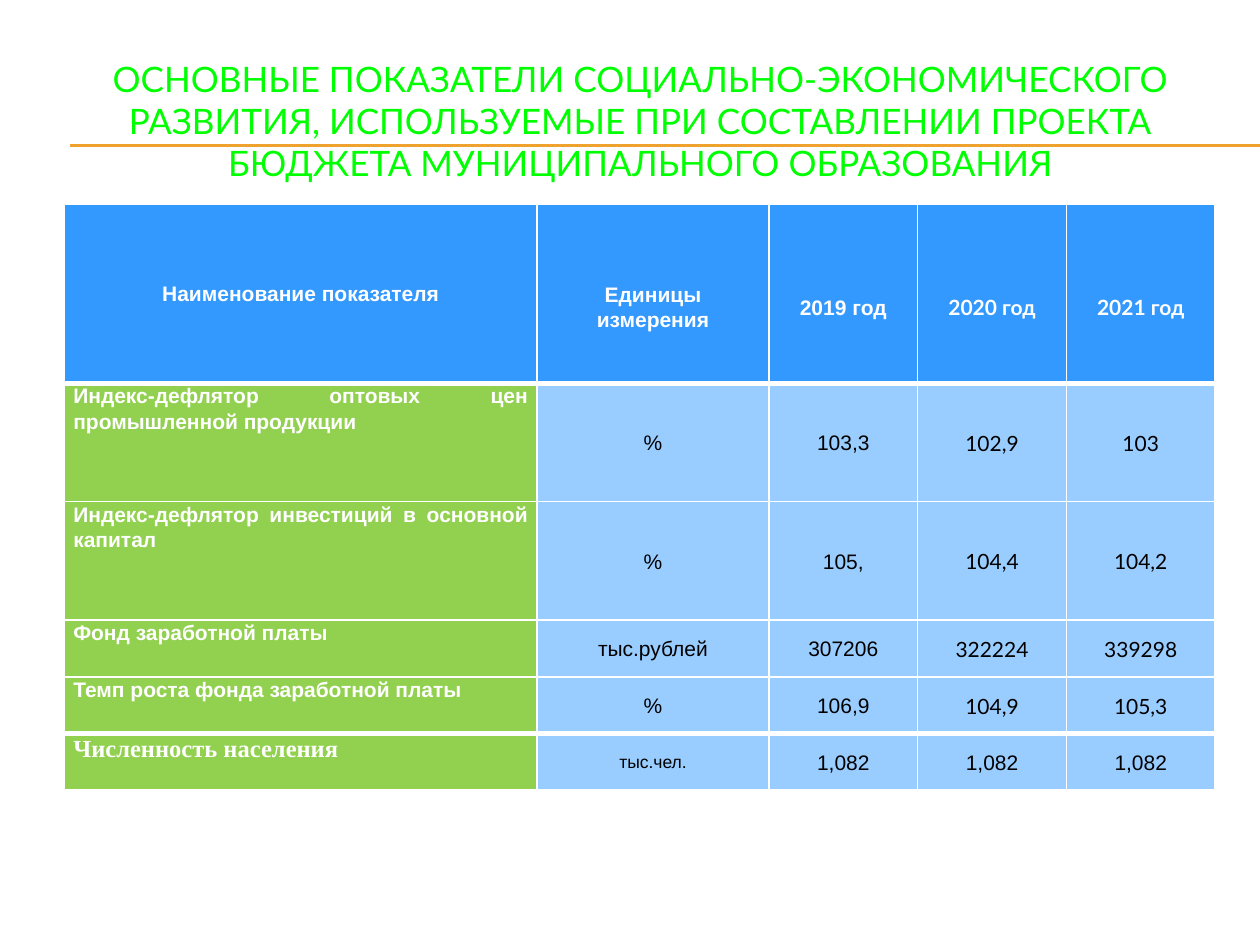
from dataclasses import dataclass

import pptx
import pptx.dml.color
import pptx.enum.shapes
import pptx.enum.text
import pptx.oxml.ns
import pptx.util
from lxml import etree

Pt = pptx.util.Pt
ALIGN = pptx.enum.text.PP_ALIGN
ANCHOR = pptx.enum.text.MSO_ANCHOR


@dataclass(frozen=True)
class Theme:
    title: str = "00FF00"
    rule: str = "F0A22E"
    header: str = "3399FF"
    indicator: str = "92D050"
    value: str = "99CCFF"
    light: str = "FFFFFF"
    dark: str = "000000"
    title_size: float = 20
    text_size: float = 12
    population_size: float = 14
    unit_size: float = 10
    sans: str = "Arial"
    display: str = "Lato"
    serif: str = "Times New Roman"


THEME = Theme()
TITLE = ("ОСНОВНЫЕ ПОКАЗАТЕЛИ СОЦИАЛЬНО-ЭКОНОМИЧЕСКОГО РАЗВИТИЯ, ИСПОЛЬЗУЕМЫЕ "
         "ПРИ СОСТАВЛЕНИИ ПРОЕКТА БЮДЖЕТА МУНИЦИПАЛЬНОГО ОБРАЗОВАНИЯ")
INDICATORS = [
    ("Наименование показателя", "Единицы измерения", "2019 год", "2020 год", "2021 год"),
    ("Индекс-дефлятор оптовых цен промышленной продукции", "%", "103,3", "102,9", "103"),
    ("Индекс-дефлятор инвестиций в основной капитал", "%", "105,", "104,4", "104,2"),
    ("Фонд заработной платы", "тыс.рублей", "307206", "322224", "339298"),
    ("Темп роста фонда заработной платы", "%", "106,9", "104,9", "105,3"),
    ("Численность населения", "тыс.чел.", "1,082", "1,082", "1,082"),
]
COLUMN_WIDTHS = [270, 132.5, 85, 85, 85]
ROW_HEIGHTS = [102.2, 67.7, 67.7, 32.4, 32.4, 32.4]
LAST_ROW = len(INDICATORS) - 1
HEAVY_EDGES = {1, LAST_ROW}  # row boundaries, counted from the table top


def rgb(value):
    return pptx.dml.color.RGBColor.from_string(value)


def add_run(paragraph, text, font, size, color, bold=False):
    run = paragraph.add_run()
    run.text = text
    run.font.name = font
    run.font.size = Pt(size)
    run.font.bold = bold
    run.font.color.rgb = rgb(color)


def add_double_rule(slide, left, top, width):
    for offset in (0, 0.6):
        rule = slide.shapes.add_connector(
            pptx.enum.shapes.MSO_CONNECTOR.STRAIGHT,
            Pt(left), Pt(top + offset), Pt(left + width), Pt(top + offset))
        rule.line.color.rgb = rgb(THEME.rule)
        rule.line.width = Pt(0.75)
        etree.SubElement(rule._element.spPr, pptx.oxml.ns.qn("a:effectLst"))


def add_title(slide, left, top, width, height):
    title = slide.shapes.add_textbox(Pt(left), Pt(top), Pt(width), Pt(height)).text_frame
    title.word_wrap = True
    title.vertical_anchor = ANCHOR.MIDDLE
    title.paragraphs[0].alignment = ALIGN.CENTER
    add_run(title.paragraphs[0], TITLE, THEME.display, THEME.title_size, THEME.title)


def set_borders(cell, row):
    qn = pptx.oxml.ns.qn
    widths = {"L": 1, "R": 1,
              "T": 3 if row in HEAVY_EDGES else 1,
              "B": 3 if row + 1 in HEAVY_EDGES else 1}
    properties = cell._tc.get_or_add_tcPr()
    for side, width in widths.items():
        edge = etree.SubElement(properties, qn(f"a:ln{side}"), w=str(int(Pt(width))))
        fill = etree.SubElement(edge, qn("a:solidFill"))
        etree.SubElement(fill, qn("a:srgbClr"), val=THEME.light)


def cell_font(row, column):
    """Return the typeface and size used at a table position."""
    if row == LAST_ROW:
        if column == 0:
            return THEME.serif, THEME.population_size
        return THEME.sans, THEME.unit_size if column == 1 else THEME.text_size
    return THEME.display if column >= 3 else THEME.sans, THEME.text_size


def fill_cell(cell, row, column, text):
    is_header = row == 0
    is_indicator = column == 0 and not is_header
    emphasized = is_header or is_indicator
    set_borders(cell, row)
    cell.fill.solid()
    cell.fill.fore_color.rgb = rgb(
        THEME.header if is_header else THEME.indicator if is_indicator else THEME.value)
    cell.margin_left = cell.margin_right = Pt(5)
    cell.margin_top = Pt(15 if is_header and column else 0)
    cell.margin_bottom = Pt(0)
    cell.vertical_anchor = ANCHOR.TOP if is_indicator else ANCHOR.MIDDLE
    paragraph = cell.text_frame.paragraphs[0]
    paragraph.alignment = ALIGN.JUSTIFY if is_indicator else ALIGN.CENTER
    paragraph.line_spacing = 1.07
    add_run(paragraph, text, *cell_font(row, column),
            THEME.light if emphasized else THEME.dark, emphasized)


def add_indicator_table(slide, left, top):
    table = slide.shapes.add_table(
        len(INDICATORS), len(COLUMN_WIDTHS), Pt(left), Pt(top),
        Pt(sum(COLUMN_WIDTHS)), Pt(sum(ROW_HEIGHTS))).table
    for column, width in zip(table.columns, COLUMN_WIDTHS):
        column.width = Pt(width)
    for row, height in zip(table.rows, ROW_HEIGHTS):
        row.height = Pt(height)
    for row, texts in enumerate(INDICATORS):
        for column, text in enumerate(texts):
            fill_cell(table.cell(row, column), row, column, text)


def main():
    deck = pptx.Presentation()
    deck.slide_width, deck.slide_height = Pt(720), Pt(540)
    slide = deck.slides.add_slide(deck.slide_layouts[6])
    add_double_rule(slide, 40.3, 82.8, 679.7)
    add_title(slide, 24, 36, 684, 66)
    add_indicator_table(slide, 36.9, 116.8)
    deck.save("out.pptx")


if __name__ == "__main__":
    main()
